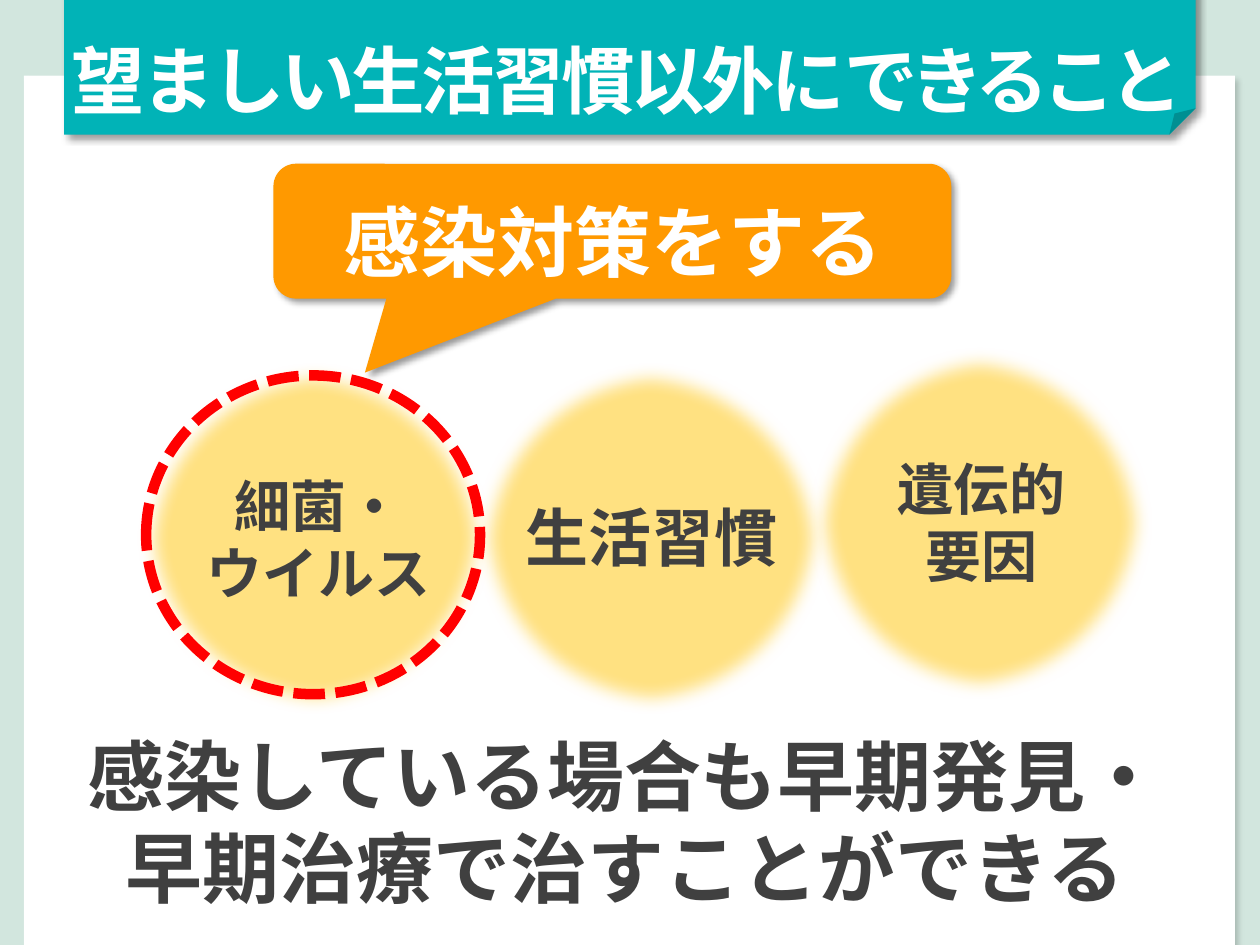
from dataclasses import dataclass

from lxml.etree import SubElement
from pptx import Presentation
from pptx.dml.color import RGBColor
from pptx.enum.dml import MSO_LINE_DASH_STYLE as Dash
from pptx.enum.shapes import MSO_SHAPE as Shape
from pptx.enum.text import MSO_ANCHOR as Anchor, PP_ALIGN as Align
from pptx.oxml.ns import qn
from pptx.util import Inches, Pt


@dataclass(frozen=True)
class Theme:
    mint: str = "D2E6DE"
    white: str = "FFFFFF"
    teal: str = "01B3B7"
    orange: str = "FF9900"
    yellow: str = "FFE181"
    red: str = "FF0000"
    ink: str = "404040"
    main_font: str = "Noto Sans CJK JP"
    circle_font: str = "League Spartan"
    title_size: int = 42
    message_size: int = 44
    factor_size: int = 32
    centre_size: int = 36
    soft_edge: float = 10


class SlideBuilder:
    def __init__(self, slide, theme):
        self.slide = slide
        self.theme = theme

    def effect(self, shape, tag, color=None, alpha=0, **attributes):
        effects = shape._element.spPr.find(qn("a:effectLst"))
        node = SubElement(effects, qn(tag), {k: str(v) for k, v in attributes.items()})
        if color:
            rgb = SubElement(node, qn("a:srgbClr"), val=color)
            SubElement(rgb, qn("a:alpha"), val=str(alpha * 1000))

    def shape(self, kind, box, fill=None, shadow=None):
        """Add a preset shape; shadow is (opacity %, blur pt, distance pt)."""
        shape = self.slide.shapes.add_shape(kind, *map(Inches, box))
        shape.shadow.inherit = False
        shape.line.fill.background()
        if fill:
            shape.fill.solid()
            shape.fill.fore_color.rgb = RGBColor.from_string(fill)
        else:
            shape.fill.background()
        if shadow:
            alpha, blur, distance = shadow
            self.effect(shape, "a:outerShdw", "000000", alpha, blurRad=Pt(blur),
                        dist=Pt(distance), dir=45 * 60000, algn="tl", rotWithShape=0)
        return shape

    def soft_circle(self, box):
        circle = self.shape(Shape.OVAL, box, self.theme.yellow)
        self.effect(circle, "a:softEdge", rad=Pt(self.theme.soft_edge))

    def dashed_ring(self, box):
        ring = self.shape(Shape.OVAL, box)
        ring.line.color.rgb = RGBColor.from_string(self.theme.red)
        ring.line.width = Pt(6)
        ring.line.dash_style = Dash.SQUARE_DOT

    def fill_frame(self, frame, lines, size, color, font):
        """Fill a frame; each line is a list of (text, spacing in pt) runs."""
        frame.word_wrap = True
        for index, runs in enumerate(lines):
            paragraph = frame.paragraphs[0] if index == 0 else frame.add_paragraph()
            paragraph.alignment = Align.CENTER
            for text, spacing in runs:
                run = paragraph.add_run()
                run.text = text
                run.font.size = Pt(size)
                run.font.bold = True
                run.font.name = font
                run.font.color.rgb = RGBColor.from_string(color)
                properties = run._r.get_or_add_rPr()
                SubElement(properties, qn("a:ea"), typeface=font)
                if spacing:
                    properties.set("spc", str(spacing * 100))

    def text(self, box, lines, size, color, font):
        frame = self.slide.shapes.add_textbox(*map(Inches, box)).text_frame
        self.fill_frame(frame, lines, size, color, font)

    def callout(self, box, adjustments, insets, words):
        theme = self.theme
        bubble = self.shape(Shape.ROUNDED_RECTANGULAR_CALLOUT, box, theme.orange, (40, 4, 3))
        for index, value in enumerate(adjustments):
            bubble.adjustments[index] = value
        frame = bubble.text_frame
        frame.vertical_anchor = Anchor.MIDDLE
        (frame.margin_left, frame.margin_top,
         frame.margin_right, frame.margin_bottom) = map(Inches, insets)
        self.fill_frame(frame, [[(words, 0)]], theme.message_size, theme.white, theme.main_font)


def main():
    theme = Theme()
    deck = Presentation()
    deck.slide_width, deck.slide_height = Inches(10), Inches(7.5)
    page = SlideBuilder(deck.slides.add_slide(deck.slide_layouts[6]), theme)

    # Backdrop, white sheet and title banner
    page.shape(Shape.RECTANGLE, (0, 0, 10, 7.5), theme.mint)
    page.shape(Shape.RECTANGLE, (0.19, 0.6, 9.61, 7.07), theme.white, (18, 3, 4))
    page.shape(Shape.FOLDED_CORNER, (0.51, -0.19, 8.98, 1.26), theme.teal, (40, 4, 3))

    # Three causes: circle box, label box, label lines, type size
    causes = [
        ((3.75, 2.87, 2.83, 2.8), (3.98, 3.91, 2.38, 0.76), ["生活習慣"], theme.centre_size),
        ((1.08, 2.87, 2.83, 2.8), (1.24, 3.69, 2.58, 1.16), ["細菌・", "ウイルス"], theme.factor_size),
        ((6.41, 2.75, 2.74, 2.8), (6.7, 3.56, 2.18, 1.18), ["遺伝的", "要因"], theme.factor_size),
    ]
    for circle_box, label_box, words, size in causes:
        page.soft_circle(circle_box)
        page.text(label_box, [[(line, 0)] for line in words], size, theme.ink, theme.circle_font)
    page.dashed_ring((1.16, 2.98, 2.65, 2.53))

    # Title
    title = [[("望ましい生活習慣以外に", -2), ("できること", -4)]]
    page.text((0.2, 0.23, 9.55, 0.81), title, theme.title_size, theme.white, theme.main_font)

    # Advice callout and closing message
    page.callout((2.17, 1.3, 5.38, 1.07), (-0.365, 1.049, 0.167),
                 (0.12, 0.2, 0.1, 0.05), "感染対策をする")
    message = [[("感染している場合も早期発見・早期治療で治すことができる", 0)]]
    page.text((0.44, 5.73, 9.05, 1.58), message, theme.message_size, theme.ink, theme.main_font)

    deck.save("out.pptx")


if __name__ == "__main__":
    main()
